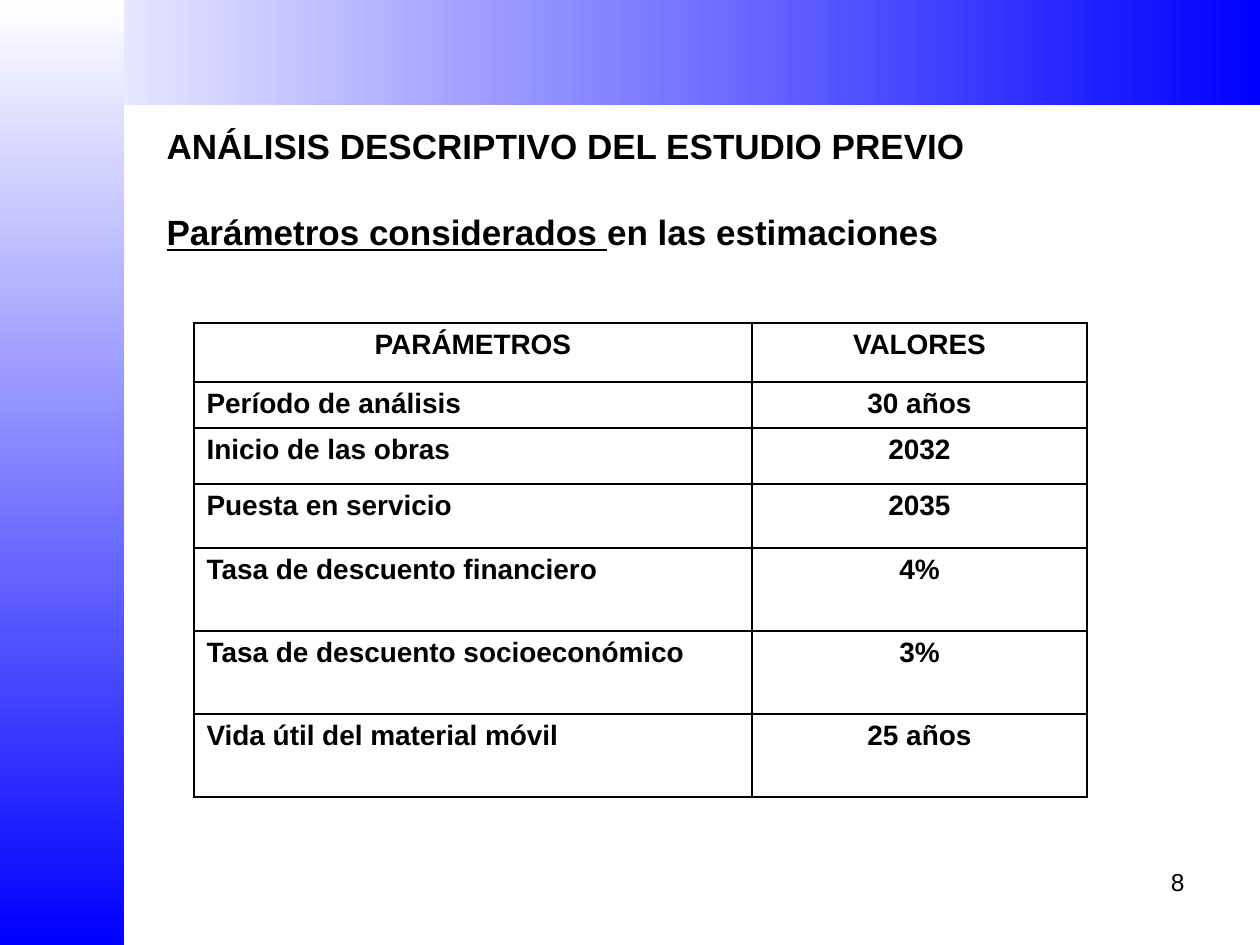
import lxml.etree
import pptx
import pptx.dml.color
import pptx.enum.shapes
import pptx.enum.text
import pptx.oxml.ns
import pptx.util

PIXELS_PER_INCH = 126
BLACK = pptx.dml.color.RGBColor(0, 0, 0)
WHITE = pptx.dml.color.RGBColor(255, 255, 255)
BLUE = pptx.dml.color.RGBColor(0, 0, 255)
LEFT = pptx.enum.text.PP_ALIGN.LEFT
CENTER = pptx.enum.text.PP_ALIGN.CENTER
RIGHT = pptx.enum.text.PP_ALIGN.RIGHT

COLUMN_WIDTHS = [558, 335]
ROW_HEIGHTS = [59, 46, 56, 64, 83, 83, 83]
PARAMETERS = [
    ("PARÁMETROS", "VALORES"),
    ("Período de análisis", "30 años"),
    ("Inicio de las obras", "2032"),
    ("Puesta en servicio", "2035"),
    ("Tasa de descuento financiero", "4%"),
    ("Tasa de descuento socioeconómico", "3%"),
    ("Vida útil del material móvil", "25 años"),
]


def px(value):
    return pptx.util.Emu(round(value * 914400 / PIXELS_PER_INCH))


def add_run(paragraph, text, size, bold=True, underline=False):
    run = paragraph.add_run()
    run.text = text
    run.font.name = "Arial"
    run.font.size = pptx.util.Pt(size)
    run.font.bold = bold
    run.font.underline = underline
    run.font.color.rgb = BLACK


def add_gradient_bar(slide, box, angle):
    bar = slide.shapes.add_shape(
        pptx.enum.shapes.MSO_SHAPE.RECTANGLE, *map(px, box))
    bar.shadow.inherit = False
    bar.line.fill.background()
    bar.fill.gradient()
    bar.fill.gradient_angle = angle
    for stop, color in zip(bar.fill.gradient_stops, (WHITE, BLUE)):
        stop.color.rgb = color


def place_title(slide, box):
    title = slide.shapes.title
    title.left, title.top, title.width, title.height = map(px, box)
    frame = title.text_frame
    frame.word_wrap = True
    frame.auto_size = pptx.enum.text.MSO_AUTO_SIZE.NONE
    frame.vertical_anchor = pptx.enum.text.MSO_ANCHOR.TOP
    frame.margin_top = px(9)
    heading = frame.paragraphs[0]
    heading.alignment = LEFT
    add_run(heading, "ANÁLISIS DESCRIPTIVO DEL ESTUDIO PREVIO", 20)
    subheading = frame.add_paragraph()
    subheading.alignment = LEFT
    subheading.space_before = pptx.util.Pt(25)
    add_run(subheading, "Parámetros considerados ", 20, underline=True)
    add_run(subheading, "en las estimaciones", 20)


def add_cell_borders(cell):
    properties = cell._tc.get_or_add_tcPr()
    qualify = pptx.oxml.ns.qn
    for index, side in enumerate(("a:lnL", "a:lnR", "a:lnT", "a:lnB")):
        line = lxml.etree.Element(qualify(side), w=str(pptx.util.Pt(1)))
        fill = lxml.etree.SubElement(line, qualify("a:solidFill"))
        lxml.etree.SubElement(fill, qualify("a:srgbClr"), val=str(BLACK))
        properties.insert(index, line)


def add_parameter_table(slide, left, top):
    box = (left, top, sum(COLUMN_WIDTHS), sum(ROW_HEIGHTS))
    table = slide.shapes.add_table(
        len(ROW_HEIGHTS), len(COLUMN_WIDTHS), *map(px, box)).table
    table.first_row = False
    table.horz_banding = False
    for column, width in zip(table.columns, COLUMN_WIDTHS):
        column.width = px(width)
    for row_index, (row, height) in enumerate(zip(table.rows, ROW_HEIGHTS)):
        row.height = px(height)
        for column_index, text in enumerate(PARAMETERS[row_index]):
            cell = table.cell(row_index, column_index)
            cell.fill.solid()
            cell.fill.fore_color.rgb = WHITE
            add_cell_borders(cell)
            paragraph = cell.text_frame.paragraphs[0]
            is_label = row_index > 0 and column_index == 0
            paragraph.alignment = LEFT if is_label else CENTER
            add_run(paragraph, text, 16)


def add_page_number(slide, box):
    frame = slide.shapes.add_textbox(*map(px, box)).text_frame
    frame.word_wrap = True
    paragraph = frame.paragraphs[0]
    paragraph.alignment = RIGHT
    add_run(paragraph, "8", 14, bold=False)


def main():
    presentation = pptx.Presentation()
    presentation.slide_width = px(1260)
    presentation.slide_height = px(945)
    slide = presentation.slides.add_slide(presentation.slide_layouts[5])
    add_gradient_bar(slide, (0, 0, 1260, 105), 0)
    add_gradient_bar(slide, (0, 0, 124, 945), 270)
    place_title(slide, (154, 116, 1052, 655))
    add_parameter_table(slide, 194, 323)
    add_page_number(slide, (1057, 861, 140, 66))
    presentation.save("out.pptx")


if __name__ == "__main__":
    main()
